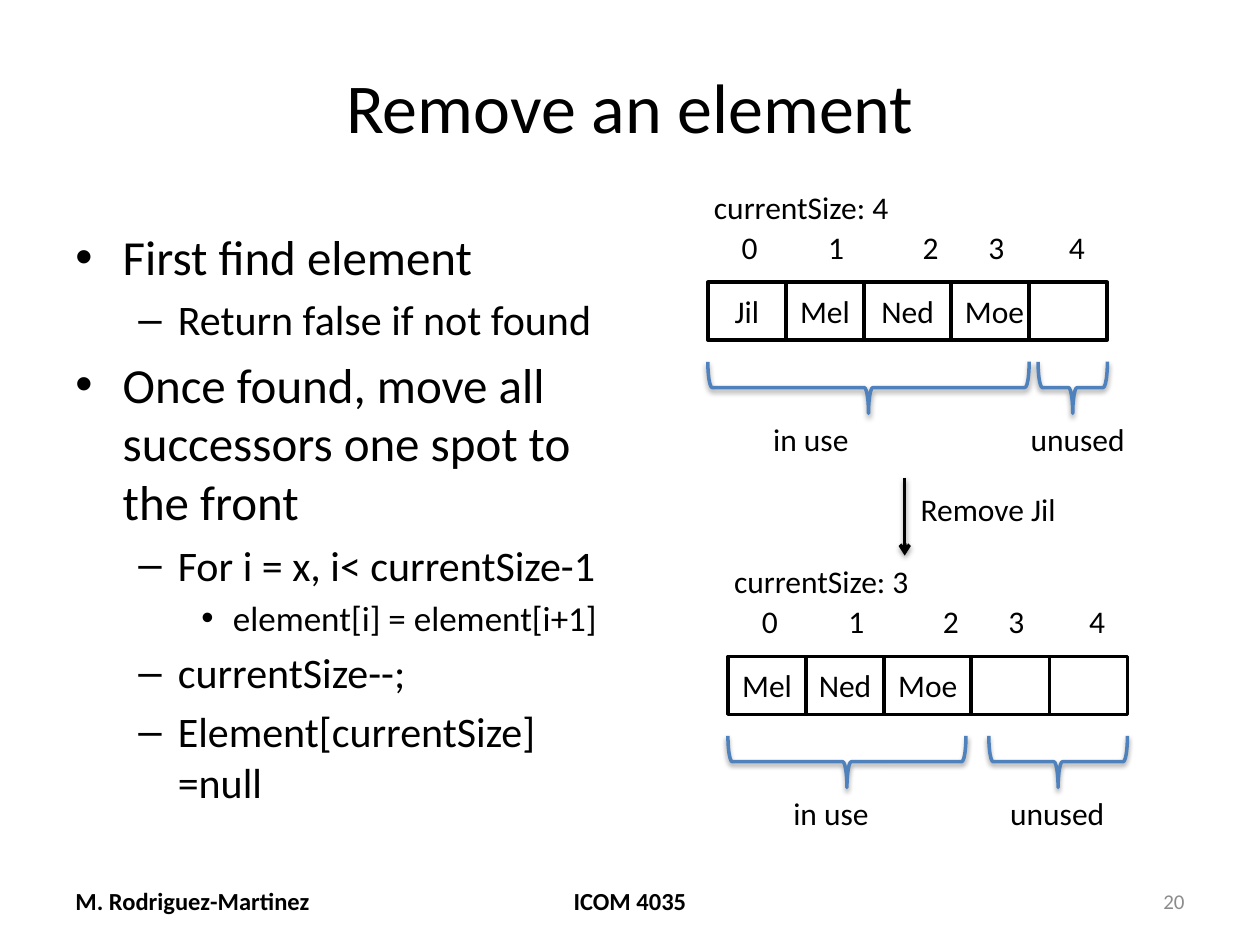
from lxml.etree import SubElement
from pptx import Presentation
from pptx.dml.color import RGBColor
from pptx.enum.shapes import MSO_CONNECTOR, MSO_SHAPE
from pptx.enum.text import MSO_ANCHOR, PP_ALIGN
from pptx.oxml.ns import qn
from pptx.util import Pt

BLACK = RGBColor(0x00, 0x00, 0x00)
WHITE = RGBColor(0xFF, 0xFF, 0xFF)
GREY = RGBColor(0x8C, 0x8C, 0x8C)
BLUE = RGBColor(0x4F, 0x81, 0xBD)

LEVELS = [(28, 27, 27, "•"), (24, 58.5, 22.5, "–"), (20, 90, 18, "•")]
POINTS = [
    (0, "First find element"),
    (1, "Return false if not found"),
    (0, "Once found, move all successors one spot to the front"),
    (1, "For i = x, i< currentSize-1"),
    (2, "element[i] = element[i+1]"),
    (1, "currentSize--;"),
    (1, "Element[currentSize] =null"),
]
CELLS = [(0, 44.6), (44.6, 44.6), (89.3, 49.7), (139, 49.7), (183.6, 44.6)]
TABS = [49.5, 103.5, 141, 187]
SPAN = 228.3
DEPTH = 29.5


class Painter:
    font = "Calibri"
    size = 18
    weight = 2

    def __init__(self, slide):
        self.slide = slide

    def words(self, para, text, size=None, color=BLACK, bold=False):
        run = para.add_run()
        run.text = text
        font = run.font
        font.name = self.font
        font.size = Pt(size or self.size)
        font.color.rgb = color
        font.bold = bold

    def frame(self, box, wrap=True, home=None):
        shape = (home or self.slide).shapes.add_textbox(*map(Pt, box))
        shape.text_frame.word_wrap = wrap
        return shape.text_frame

    def label(self, text, box, align=PP_ALIGN.LEFT, wrap=False, middle=False, **style):
        frame = self.frame(box, wrap)
        if middle:
            frame.vertical_anchor = MSO_ANCHOR.MIDDLE
        para = frame.paragraphs[0]
        para.alignment = align
        self.words(para, text, **style)

    def bullets(self, box, items):
        frame = self.frame(box)
        for num, (level, text) in enumerate(items):
            para = frame.add_paragraph() if num else frame.paragraphs[0]
            size, left, hang, mark = LEVELS[level]
            para.level = level
            para.space_before = Pt(size * 0.2)
            props = para._p.get_or_add_pPr()
            props.set("marL", str(Pt(left)))
            props.set("indent", str(-Pt(hang)))
            SubElement(props, qn("a:buFont"), typeface="Arial")
            SubElement(props, qn("a:buChar"), char=mark)
            self.words(para, text, size)

    def cell(self, group, box, text):
        shape = group.shapes.add_shape(MSO_SHAPE.RECTANGLE, *map(Pt, box))
        shape.shadow.inherit = False
        shape.fill.solid()
        shape.fill.fore_color.rgb = WHITE
        shape.line.color.rgb = BLACK
        shape.line.width = Pt(self.weight)
        frame = shape.text_frame
        frame.margin_left = frame.margin_right = 0
        frame.vertical_anchor = MSO_ANCHOR.MIDDLE
        if text:
            para = frame.paragraphs[0]
            para.alignment = PP_ALIGN.CENTER
            self.words(para, text)

    def index(self, group, box):
        para = self.frame(box, home=group).paragraphs[0]
        stops = SubElement(para._p.get_or_add_pPr(), qn("a:tabLst"))
        for tab in TABS:
            SubElement(stops, qn("a:tab"), pos=str(Pt(tab)), algn="l")
        self.words(para, "\t".join(map(str, range(len(CELLS)))))

    def shade(self, effects):
        shadow = SubElement(effects, qn("a:outerShdw"), blurRad=str(Pt(3.1)),
                            dist=str(Pt(1.6)), dir="5400000", rotWithShape="0")
        color = SubElement(shadow, qn("a:srgbClr"), val=str(BLACK))
        SubElement(color, qn("a:alpha"), val="38000")

    def brace(self, left, top, width):
        shift = (width - DEPTH) / 2
        box = left + shift, top - shift, DEPTH, width
        shape = self.slide.shapes.add_shape(MSO_SHAPE.LEFT_BRACE, *map(Pt, box))
        shape.rotation = 270
        shape.fill.background()
        shape.line.color.rgb = BLUE
        shape.line.width = Pt(self.weight)
        shape.shadow.inherit = False
        self.shade(shape.element.spPr.find(qn("a:effectLst")))

    def arrow(self, *ends):
        line = self.slide.shapes.add_connector(MSO_CONNECTOR.STRAIGHT, *map(Pt, ends))
        line.line.color.rgb = BLACK
        line.line.width = Pt(self.weight)
        props = line.element.spPr
        SubElement(props.find(qn("a:ln")), qn("a:tailEnd"), type="arrow")
        self.shade(SubElement(props, qn("a:effectLst")))

    def array(self, left, top, names, used, rest):
        group = self.slide.shapes.add_group_shape()
        for num, (shift, width) in enumerate(CELLS):
            text = names[num] if num < len(names) else ""
            self.cell(group, (left + shift, top, width, 33.1), text)
        self.index(group, (left + 12.2, top - 34.6, 212.4, 29))
        self.label(f"currentSize: {len(names)}", (left - 3.6, top - 57.6, 116, 29))
        self.brace(left, top + 45.4, used)
        self.brace(left + SPAN - rest, top + 45.4, rest)
        self.label("in use", (left + 30.2, top + 74.9, 58.3, 29))


def main():
    deck = Presentation()
    deck.slide_width, deck.slide_height = Pt(720), Pt(540)
    pen = Painter(deck.slides.add_slide(deck.slide_layouts[6]))
    mid = PP_ALIGN.CENTER
    pen.label("Remove an element", (36, 21.6, 648, 77), mid, True, True, size=40)
    pen.bullets((36, 126, 318.2, 356.4), POINTS)
    pen.array(404.5, 161.3, ["Jil", "Mel", "Ned", "Moe"], 183.6, 39.6)
    pen.label("unused", (581.8, 236.2, 69.1, 29))
    pen.arrow(517, 273, 517, 317.5)
    pen.label("Remove Jil", (519, 276.5, 92.9, 29))
    pen.array(416, 375.1, ["Mel", "Ned", "Moe"], 136, 79.2)
    pen.label("unused", (570.2, 450, 69.1, 29))
    foot = {"wrap": True, "middle": True}
    pen.label("M. Rodriguez-Martinez", (36, 500.5, 168, 28.8), size=14, bold=True, **foot)
    pen.label("ICOM 4035", (246, 500.5, 228, 28.8), mid, size=14, bold=True, **foot)
    pen.label("20", (516, 500.5, 168, 28.8), PP_ALIGN.RIGHT, size=12, color=GREY, **foot)
    deck.save("out.pptx")


if __name__ == "__main__":
    main()
